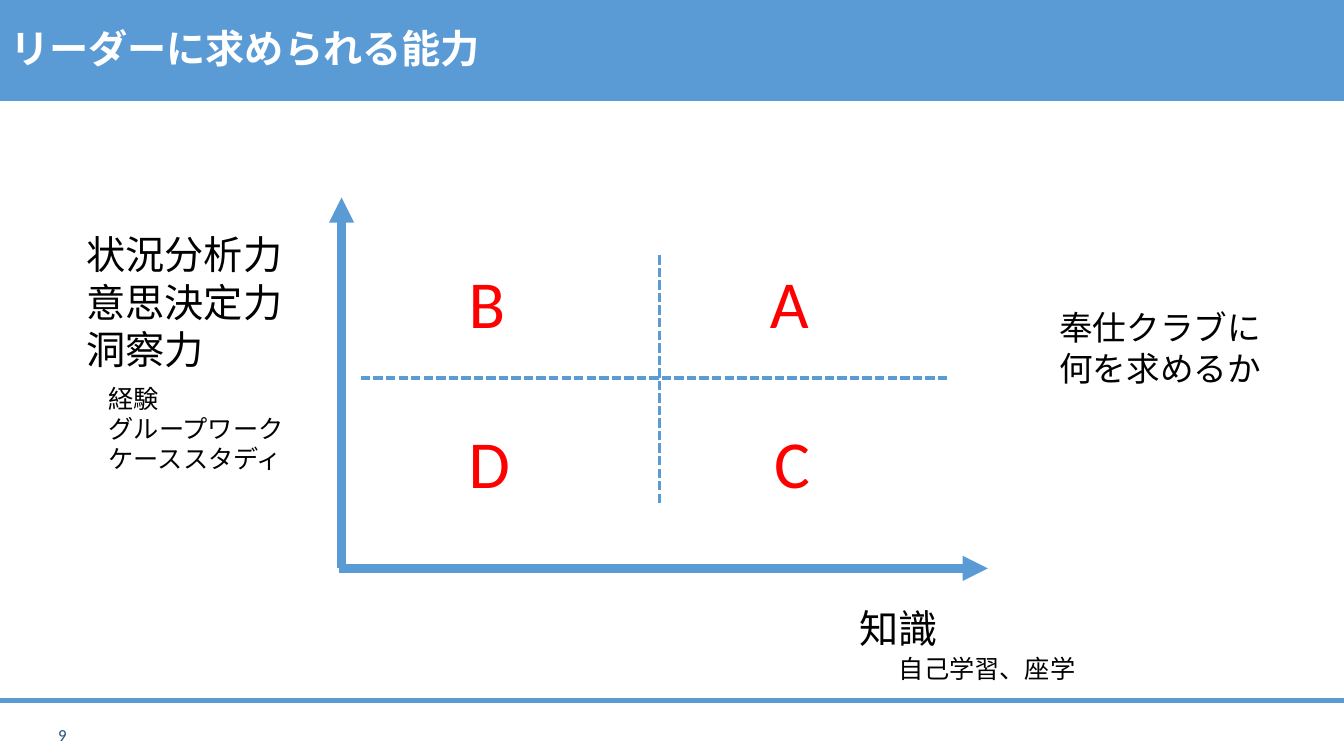
from dataclasses import dataclass
from typing import Any

import pptx
import pptx.dml.color
import pptx.enum.dml
import pptx.enum.shapes
import pptx.enum.text
import pptx.oxml.ns
import pptx.util
from lxml import etree

Pt = pptx.util.Pt
RGBColor = pptx.dml.color.RGBColor
Align = pptx.enum.text.PP_ALIGN
Anchor = pptx.enum.text.MSO_ANCHOR
AutoSize = pptx.enum.text.MSO_AUTO_SIZE
qn = pptx.oxml.ns.qn

BLUE = RGBColor(0x5B, 0x9B, 0xD5)
NAVY = RGBColor(0x1F, 0x4E, 0x79)
RED = RGBColor(0xFF, 0x00, 0x00)
BLACK = RGBColor(0x00, 0x00, 0x00)
WHITE = RGBColor(0xFF, 0xFF, 0xFF)
LATIN_FONT = "Calibri"
JAPANESE_FONT = "Noto Sans CJK JP"

SLIDE_WIDTH = 960
SLIDE_HEIGHT = 540
AXIS_BASE = 406
FOOTER_RULE_Y = 500.4
MIDDLE_Y = 270


@dataclass(frozen=True)
class Label:
    lines: tuple[str, ...]
    left: float
    top: float
    width: float
    height: float
    size: float
    color: RGBColor = BLACK


@dataclass(frozen=True)
class Rule:
    start: tuple[float, float]
    end: tuple[float, float]
    weight: float
    dashed: bool = False
    arrow: bool = False


RULES = (
    Rule((0, FOOTER_RULE_Y), (SLIDE_WIDTH, FOOTER_RULE_Y), 3),
    Rule((244, AXIS_BASE), (244, 141), 6, arrow=True),
    Rule((242, AXIS_BASE), (705.6, AXIS_BASE), 6, arrow=True),
    Rule((257.8, MIDDLE_Y), (677.5, MIDDLE_Y), 2.25, dashed=True),
    Rule((470.9, 359.3), (470.9, 180.7), 2.25, dashed=True),
)

LABELS = (
    Label(("知識",), 607, 428.4, 71.3, 41, 28),
    Label(("状況分析力", "意思決定力", "洞察力"), 54.7, 161.3, 156.2, 108.7, 28),
    Label(("自己学習、座学",), 635, 463, 141.8, 28.8, 18),
    Label(("経験", "グループワーク", "ケーススタディ"), 70.6, 270, 141.8, 72.7, 18),
    Label(("奉仕クラブに", "何を求めるか"), 749.5, 216, 159.8, 65.5, 24),
)

QUADRANT_TOPS = (182.9, 297.4)
QUADRANTS = (
    (("B", 327.6, 41), ("A", 542.9, 42.5)),
    (("D", 327.6, 44.6), ("C", 545.8, 40.3)),
)


def apply_format(target: Any, values: dict[str, Any]) -> None:
    for name, value in values.items():
        setattr(target, name, value)


def style_run(run: Any, latin: str, size: float, color: RGBColor, bold: bool = False) -> None:
    apply_format(run.font, {"name": latin, "size": Pt(size), "bold": bold})
    run.font.color.rgb = color
    east_asian = etree.Element(qn("a:ea"), typeface=JAPANESE_FONT)
    run.font._element.find(qn("a:latin")).addnext(east_asian)


def add_title(slide: Any, wording: str) -> None:
    title = slide.shapes.title
    apply_format(title, {"left": 0, "top": 0, "width": Pt(SLIDE_WIDTH), "height": Pt(72)})
    title.fill.solid()
    title.fill.fore_color.rgb = BLUE
    apply_format(title.text_frame, {
        "vertical_anchor": Anchor.MIDDLE,
        "auto_size": AutoSize.NONE,
        "word_wrap": True,
    })
    heading = title.text_frame.paragraphs[0]
    apply_format(heading, {"alignment": Align.LEFT, "line_spacing": 0.9})
    run = heading.add_run()
    run.text = wording
    style_run(run, JAPANESE_FONT, 28, WHITE, bold=True)


def add_rule(slide: Any, rule: Rule) -> None:
    connector = slide.shapes.add_connector(
        pptx.enum.shapes.MSO_CONNECTOR.STRAIGHT,
        *(Pt(value) for value in rule.start + rule.end),
    )
    connector.line.width = Pt(rule.weight)
    connector.line.color.rgb = BLUE
    if rule.dashed:
        connector.line.dash_style = pptx.enum.dml.MSO_LINE.SQUARE_DOT
    properties = connector._element.spPr
    if rule.arrow:
        etree.SubElement(properties.find(qn("a:ln")), qn("a:tailEnd"), type="triangle")
    etree.SubElement(properties, qn("a:effectLst"))


def add_label(slide: Any, label: Label) -> Any:
    box = slide.shapes.add_textbox(
        Pt(label.left), Pt(label.top), Pt(label.width), Pt(label.height)
    )
    frame = box.text_frame
    apply_format(frame, {"word_wrap": False, "auto_size": AutoSize.SHAPE_TO_FIT_TEXT})
    frame.text = "\n".join(label.lines)
    for paragraph in frame.paragraphs:
        style_run(paragraph.runs[0], LATIN_FONT, label.size, label.color)
    return frame


def add_page_number(slide: Any) -> None:
    frame = add_label(slide, Label(("9",), 0, 510.5, 54.7, 28.8, 12, NAVY))
    apply_format(frame, {
        "word_wrap": True,
        "auto_size": AutoSize.NONE,
        "vertical_anchor": Anchor.MIDDLE,
    })
    frame.paragraphs[0].alignment = Align.RIGHT


def main() -> None:
    presentation = pptx.Presentation()
    apply_format(presentation, {
        "slide_width": Pt(SLIDE_WIDTH),
        "slide_height": Pt(SLIDE_HEIGHT),
    })
    slide = presentation.slides.add_slide(presentation.slide_layouts[5])
    add_title(slide, "リーダーに求められる能力")
    for rule in RULES:
        add_rule(slide, rule)
    for label in LABELS:
        add_label(slide, label)
    for top, row in zip(QUADRANT_TOPS, QUADRANTS):
        for letter, left, width in row:
            add_label(slide, Label((letter,), left, top, width, 65.5, 48, RED))
    add_page_number(slide)
    presentation.save("out.pptx")


if __name__ == "__main__":
    main()
